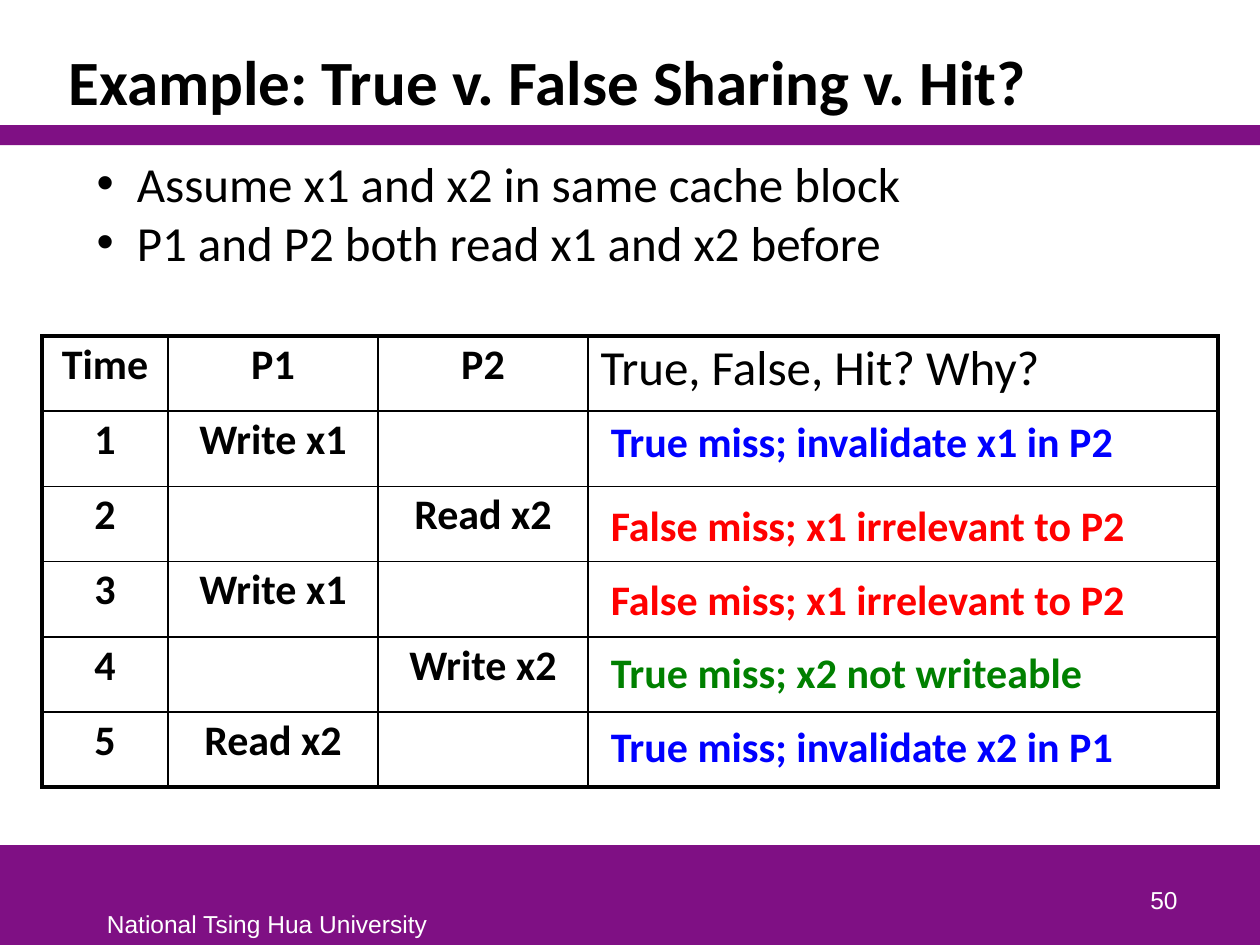
from lxml.etree import SubElement
from pptx import Presentation
from pptx.dml.color import RGBColor
from pptx.enum.shapes import MSO_SHAPE
from pptx.enum.text import MSO_ANCHOR, MSO_AUTO_SIZE, PP_ALIGN
from pptx.oxml.ns import qn
from pptx.util import Pt

BLACK = RGBColor(0x00, 0x00, 0x00)
WHITE = RGBColor(0xFF, 0xFF, 0xFF)
PURPLE = RGBColor(0x7F, 0x10, 0x84)
BLUE = RGBColor(0x00, 0x00, 0xFF)
RED = RGBColor(0xFF, 0x00, 0x00)
GREEN = RGBColor(0x00, 0x80, 0x00)

PAGE_WIDTH, PAGE_HEIGHT = 720, 540
INSETS = (7.2, 3.6, 7.2, 0)
OUTER_LINE, INNER_LINE = 2.25, 1

HEADER = ["Time", "P1", "P2", "True, False, Hit? Why?"]
STEPS = [
    ["1", "Write x1", "", ""],
    ["2", "", "Read x2", ""],
    ["3", "Write x1", "", ""],
    ["4", "", "Write x2", ""],
    ["5", "Read x2", "", ""],
]
COLUMN_WIDTHS = [72, 120, 120, 360]
ROW_HEIGHT = 43

FIRST_ANSWER = ("True miss; invalidate x1 in P2", BLUE, 307)
LATER_ANSWERS = [
    ("False miss; x1 irrelevant to P2", RED, 313),
    ("False miss; x1 irrelevant to P2", RED, 313),
    ("True miss; x2 not writeable", GREEN, 288),
    ("True miss; invalidate x2 in P1", BLUE, 307),
]


def write(para, text, size=24, color=BLACK, bold=False, font="Calibri",
          align=PP_ALIGN.LEFT, spacing=1.0):
    para.alignment = align
    para.line_spacing = spacing
    para.space_before = Pt(0)
    span = para.add_run()
    span.text = text
    span.font.name = font
    span.font.size = Pt(size)
    span.font.bold = bold
    span.font.color.rgb = color


def set_insets(frame, insets):
    (frame.margin_left, frame.margin_top,
     frame.margin_right, frame.margin_bottom) = map(Pt, insets)


def place(shape, left, top, width, height):
    shape.left, shape.top = Pt(left), Pt(top)
    shape.width, shape.height = Pt(width), Pt(height)


def add_bullet(para, indent):
    properties = para._p.get_or_add_pPr()
    properties.set("marL", str(Pt(indent)))
    properties.set("indent", str(-Pt(indent)))
    SubElement(properties, qn("a:buFont"), typeface="Arial")
    SubElement(properties, qn("a:buChar"), char="•")


def set_borders(cell, widths):
    """Draw black borders; widths are left, right, top, bottom."""
    properties = cell._tc.get_or_add_tcPr()
    for position, (side, width) in enumerate(zip("LRTB", widths)):
        line = SubElement(properties, qn(f"a:ln{side}"), w=str(Pt(width)))
        fill = SubElement(line, qn("a:solidFill"))
        SubElement(fill, qn("a:srgbClr"), val=str(BLACK))
        properties.insert(position, line)


class SlideBuilder:
    def __init__(self, page):
        self.page = page

    def title(self, text, *bounds):
        shape = self.page.shapes.title
        place(shape, *bounds)
        frame = shape.text_frame
        frame.auto_size = MSO_AUTO_SIZE.NONE
        frame.vertical_anchor = MSO_ANCHOR.BOTTOM
        write(frame.paragraphs[0], text, size=36, bold=True, spacing=0.85)

    def bullets(self, lines, *bounds):
        shape = self.page.placeholders[1]
        place(shape, *bounds)
        frame = shape.text_frame
        frame.auto_size = MSO_AUTO_SIZE.NONE
        set_insets(frame, INSETS)
        for index, text in enumerate(lines):
            para = frame.paragraphs[0] if index == 0 else frame.add_paragraph()
            add_bullet(para, 23)
            write(para, text, size=28)

    def bar(self, top, height):
        shape = self.page.shapes.add_shape(
            MSO_SHAPE.RECTANGLE, 0, Pt(top), Pt(PAGE_WIDTH), Pt(height))
        shape.shadow.inherit = False
        shape.fill.solid()
        shape.fill.fore_color.rgb = PURPLE
        shape.line.fill.background()

    def text(self, text, left, top, width, height, wrap=False,
             anchor=MSO_ANCHOR.TOP, insets=INSETS, **style):
        box = self.page.shapes.add_textbox(
            Pt(left), Pt(top), Pt(width), Pt(height))
        frame = box.text_frame
        frame.word_wrap = wrap
        frame.vertical_anchor = anchor
        set_insets(frame, insets)
        write(frame.paragraphs[0], text, **style)

    def table(self, rows, left, top):
        last_row, last_column = len(rows) - 1, len(COLUMN_WIDTHS) - 1
        table = self.page.shapes.add_table(
            len(rows), len(COLUMN_WIDTHS), Pt(left), Pt(top),
            Pt(sum(COLUMN_WIDTHS)), Pt(ROW_HEIGHT * len(rows))).table
        table.first_row = table.horz_banding = False
        for column, width in zip(table.columns, COLUMN_WIDTHS):
            column.width = Pt(width)
        for row_index, row in enumerate(rows):
            table.rows[row_index].height = Pt(ROW_HEIGHT)
            for column_index, text in enumerate(row):
                cell = table.cell(row_index, column_index)
                cell.fill.background()
                set_insets(cell, INSETS)
                edges = (column_index == 0, column_index == last_column,
                         row_index == 0, row_index == last_row)
                set_borders(cell, [OUTER_LINE if edge else INNER_LINE
                                   for edge in edges])
                if not text:
                    continue
                question = column_index == last_column
                write(cell.text_frame.paragraphs[0], text, spacing=0.9,
                      size=28 if question else 24, bold=not question,
                      align=PP_ALIGN.LEFT if question else PP_ALIGN.CENTER)


def main():
    deck = Presentation()
    deck.slide_width, deck.slide_height = Pt(PAGE_WIDTH), Pt(PAGE_HEIGHT)
    builder = SlideBuilder(deck.slides.add_slide(deck.slide_layouts[1]))

    builder.bar(483, 57)
    builder.bar(71.5, 11.5)
    builder.title("Example: True v. False Sharing v. Hit?", 32, 18, 646, 53)
    builder.bullets(["Assume x1 and x2 in same cache block",
                     "P1 and P2 both read x1 and x2 before"], 48, 84, 540, 71)
    builder.table([HEADER] + STEPS, 24, 192)

    tops = [234] + [282 + 42 * index for index in range(len(LATER_ANSWERS))]
    for top, (text, color, width) in zip(tops, [FIRST_ANSWER] + LATER_ANSWERS):
        builder.text(text, 342, top, width, 32.5, color=color, bold=True)

    footer = {"size": 14, "font": "Arial", "color": WHITE,
              "insets": (7.2, 3.6, 7.2, 3.6)}
    builder.text("National Tsing Hua University", 54, 516, 199, 24, **footer)
    builder.text("50", 530, 490, 150, 36, wrap=True, anchor=MSO_ANCHOR.BOTTOM,
                 align=PP_ALIGN.RIGHT, **footer)
    deck.save("out.pptx")


if __name__ == "__main__":
    main()
